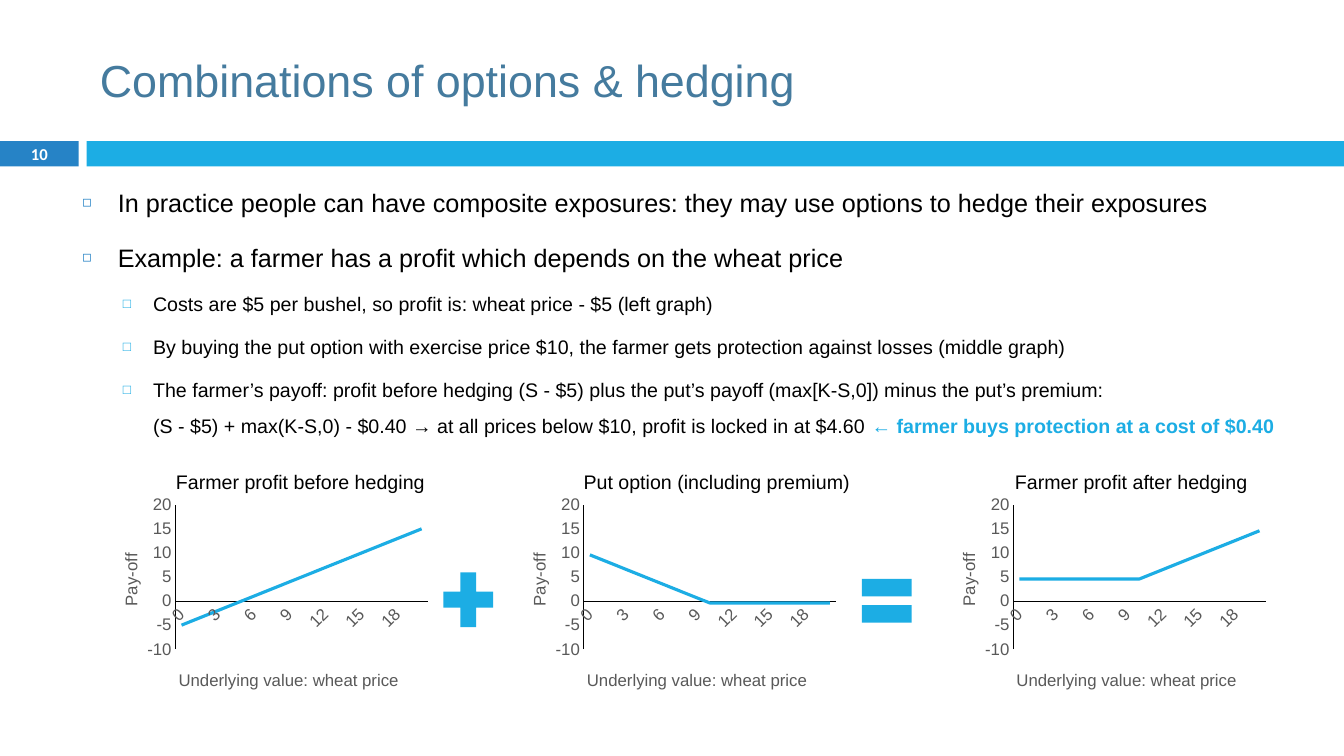
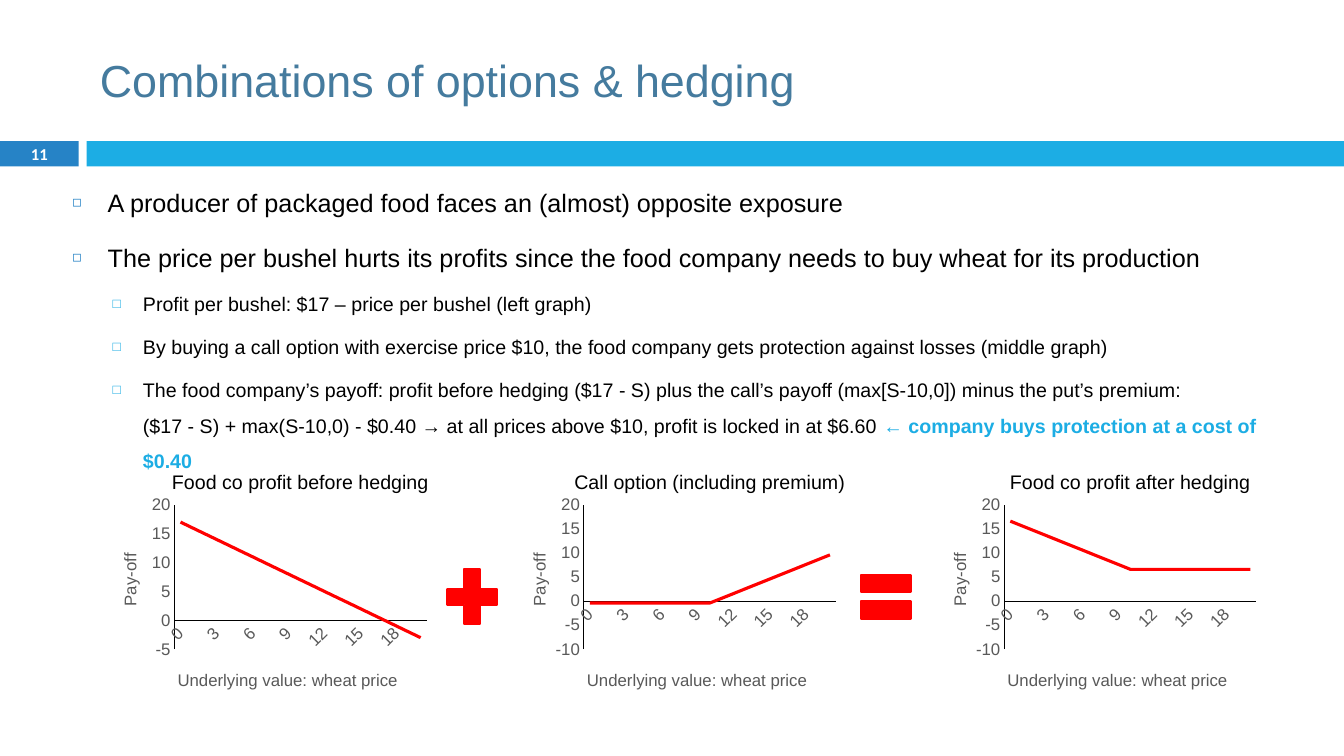
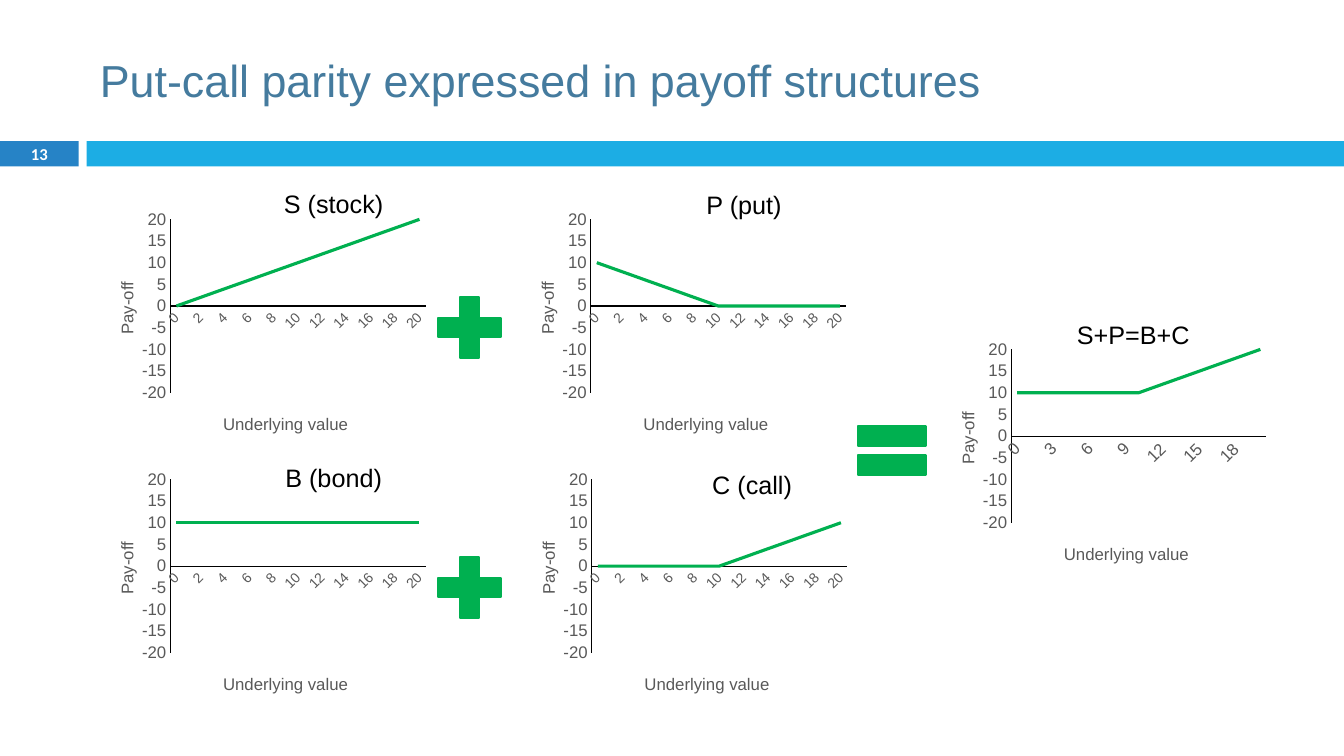
from lxml import etree
from pptx import Presentation
from pptx import util as u
from pptx.chart import data
from pptx.dml.color import RGBColor
from pptx.enum import chart as charts, shapes, text
from pptx.oxml.ns import qn

SKY = RGBColor(0x1C, 0xAD, 0xE4)
BLUE = RGBColor(0x26, 0x83, 0xC6)
TITLE_BLUE = RGBColor(0x45, 0x7B, 0x9E)
RED = RGBColor(0xFF, 0x00, 0x00)
GREEN = RGBColor(0x00, 0xB0, 0x50)
GREY = RGBColor(0x59, 0x59, 0x59)
BLACK = RGBColor(0x00, 0x00, 0x00)
WHITE = RGBColor(0xFF, 0xFF, 0xFF)

STRIKE = 10
PREMIUM = 0.4
COST = 5
REVENUE = 17
PRICES = range(21)

BULLETS = [
    dict(mark="◻", color=BLUE, scale=60, left=0.35, hang=0.35, before=7, size=18),
    dict(mark="□", color=SKY, scale=70, left=0.7, hang=0.3, before=5.5, size=14),
]
HEDGE_FRAME = dict(
    size=(3.38, 2.14), plot=(0.24, 0.06, 0.74, 0.67),
    value_title=(0.07, 0.27), price_title=(0.24, 0.81),
    caption="Underlying value: wheat price",
)
PARITY_FRAME = dict(
    size=(3.4, 2.44), plot=(0.235, 0.06, 0.745, 0.705),
    value_title=(0.07, 0.3), price_title=(0.38, 0.84),
    caption="Underlying value",
)


def put(price):
    return max(STRIKE - price, 0)


def call(price):
    return max(price - STRIKE, 0)


def inches(*lengths):
    return [u.Inches(length) for length in lengths]


def style(font, size, color, bold=False, name="Arial"):
    font.name = name
    font.size = u.Pt(size)
    font.bold = bold
    font.color.rgb = color


def add_block(page, kind, place, color, outline=0):
    block = page.shapes.add_shape(kind, *inches(*place))
    block.shadow.inherit = False
    block.fill.solid()
    block.fill.fore_color.rgb = color
    if outline:
        block.line.color.rgb = color
        block.line.width = u.Pt(outline)
    else:
        block.line.fill.background()
    return block


def add_page(deck, heading, number):
    page = deck.slides.add_slide(deck.slide_layouts[5])
    badge = add_block(page, shapes.MSO_SHAPE.RECTANGLE, (0, 1.4, 0.78, 0.25), BLUE)
    add_block(page, shapes.MSO_SHAPE.RECTANGLE, (0.86, 1.4, 12.47, 0.25), SKY)
    frame = badge.text_frame
    frame.margin_top = frame.margin_bottom = 0
    frame.vertical_anchor = text.MSO_ANCHOR.MIDDLE
    frame.text = str(number)
    frame.paragraphs[0].alignment = text.PP_ALIGN.CENTER
    style(frame.paragraphs[0].runs[0].font, 11.9, WHITE, True, "Calibri")

    title = page.shapes.title
    title.left, title.top, title.width, title.height = inches(0.89, 0.25, 11.89, 1.08)
    title.text_frame.text = heading
    title.text_frame.vertical_anchor = text.MSO_ANCHOR.MIDDLE
    title.text_frame.paragraphs[0].alignment = text.PP_ALIGN.LEFT
    style(title.text_frame.paragraphs[0].runs[0].font, 32, TITLE_BLUE)
    return page


def set_bullet(para, level):
    props = para._p.get_or_add_pPr()
    props.set("marL", str(u.Inches(level["left"])))
    props.set("indent", str(-u.Inches(level["hang"])))
    color = etree.SubElement(props, qn("a:buClr"))
    etree.SubElement(color, qn("a:srgbClr"), val=str(level["color"]))
    etree.SubElement(props, qn("a:buSzPct"), val=str(level["scale"] * 1000))
    etree.SubElement(props, qn("a:buFont"), typeface="Arial")
    etree.SubElement(props, qn("a:buChar"), char=level["mark"])


def add_bullets(page, place, items, highlight):
    frame = page.shapes.add_textbox(*inches(*place)).text_frame
    frame.word_wrap = True
    for index, (depth, words) in enumerate(items):
        level = BULLETS[depth]
        para = frame.add_paragraph() if index else frame.paragraphs[0]
        para.text = words
        para.level = depth
        para.line_spacing = 1.5
        para.space_before = u.Pt(level["before"])
        set_bullet(para, level)
        for span in para.runs:
            style(span.font, level["size"], BLACK)
        for line_break in para._p.findall(qn("a:br")):
            etree.SubElement(line_break, qn("a:rPr"), sz=str(level["size"] * 100))
    span = para.add_run()
    span.text = highlight
    style(span.font, level["size"], SKY, True)


def add_label(page, center, top, words, size):
    width = 3
    box = page.shapes.add_textbox(*inches(center - width / 2, top, width, 0.35))
    box.text_frame.word_wrap = True
    box.text_frame.text = words
    para = box.text_frame.paragraphs[0]
    para.alignment = text.PP_ALIGN.CENTER
    style(para.runs[0].font, size, BLACK)


def set_layout(parent, fractions, inner=False):
    layout = parent.find(qn("c:layout"))
    if layout is None:
        layout = etree.Element(qn("c:layout"))
        parent.insert(0, layout)
    manual = etree.SubElement(layout, qn("c:manualLayout"))
    if inner:
        etree.SubElement(manual, qn("c:layoutTarget"), val="inner")
    for mode in ("xMode", "yMode"):
        etree.SubElement(manual, qn("c:" + mode), val="edge")
    for side, fraction in zip("xywh", fractions):
        etree.SubElement(manual, qn("c:" + side), val=str(fraction))


def format_axis(axis, caption, spot, label_size, title_turn, label_turn):
    axis.has_major_gridlines = False
    axis.major_tick_mark = charts.XL_TICK_MARK.NONE
    axis.minor_tick_mark = charts.XL_TICK_MARK.NONE
    axis.format.line.color.rgb = BLACK
    axis.format.line.width = u.Pt(0.75)
    style(axis.tick_labels.font, label_size, GREY)
    labels = axis._element.find(qn("c:txPr")).find(qn("a:bodyPr"))
    labels.set("rot", str(label_turn * 60000))

    frame = axis.axis_title.text_frame
    frame.text = caption
    style(frame.paragraphs[0].runs[0].font, 12, GREY)
    frame._txBody.find(qn("a:bodyPr")).set("rot", str(title_turn * 60000))
    set_layout(axis.axis_title._element, spot)


def add_payoff(page, left, top, payoff, color, frame, low, label_size=12):
    series_data = data.CategoryChartData()
    series_data.categories = [str(price) for price in PRICES]
    series_data.add_series("Series 1", [round(payoff(price), 1) for price in PRICES])
    chart = page.shapes.add_chart(
        charts.XL_CHART_TYPE.LINE, *inches(left, top, *frame["size"]), series_data
    ).chart
    chart.has_legend = False
    chart.has_title = False
    style(chart.font, 12, BLACK)
    set_layout(chart._chartSpace.chart.plotArea, frame["plot"], True)
    format_axis(chart.category_axis, frame["caption"], frame["price_title"],
                label_size, 0, -45)
    format_axis(chart.value_axis, "Pay-off", frame["value_title"], 12, -90, 0)
    chart.value_axis.minimum_scale = low
    chart.value_axis.maximum_scale = 20
    chart.value_axis.major_unit = 5

    plot = chart.plots[0]
    plot.vary_by_categories = False
    series = plot.series[0]
    series.smooth = False
    series.marker.style = charts.XL_MARKER_STYLE.NONE
    series.format.line.color.rgb = color
    series.format.line.width = u.Pt(2.25)


def add_hedge(page, color, graphs, signs, outline=0):
    for left, center, low, label, payoff in graphs:
        add_payoff(page, left, 4.88, payoff, color, HEDGE_FRAME, low)
        add_label(page, center, 4.61, label, 14)
    kinds = (shapes.MSO_SHAPE.MATH_PLUS, shapes.MSO_SHAPE.MATH_EQUAL)
    for kind, (left, top) in zip(kinds, signs):
        add_block(page, kind, (left, top, 0.67, 0.74), color, outline)


def farmer_slide(deck):
    page = add_page(deck, "Combinations of options & hedging", 10)
    add_bullets(page, (0.72, 1.66, 12.23, 2.95), [
        (0, "In practice people can have composite exposures: they may use options to hedge their exposures"),
        (0, "Example: a farmer has a profit which depends on the wheat price"),
        (1, "Costs are $5 per bushel, so profit is: wheat price - $5 (left graph)"),
        (1, "By buying the put option with exercise price $10, the farmer gets protection against losses (middle graph)"),
        (1, "The farmer’s payoff: profit before hedging (S - $5) plus the put’s payoff (max[K-S,0]) minus the put’s premium:\n"
            "(S - $5) + max(K-S,0) - $0.40 → at all prices below $10, profit is locked in at $4.60 "),
    ], "← farmer buys protection at a cost of $0.40")
    add_hedge(page, SKY, [
        (0.93, 2.98, -10, "Farmer profit before hedging", lambda s: s - COST),
        (4.98, 7.11, -10, "Put option (including premium)", lambda s: put(s) - PREMIUM),
        (9.24, 11.22, -10, "Farmer profit after hedging", lambda s: s - COST + put(s) - PREMIUM),
    ], [(4.31, 5.58), (8.46, 5.59)])


def food_slide(deck):
    page = add_page(deck, "Combinations of options & hedging", 11)
    add_bullets(page, (0.62, 1.66, 12.44, 2.95), [
        (0, "A producer of packaged food faces an (almost) opposite exposure"),
        (0, "The price per bushel hurts its profits since the food company needs to buy wheat for its production"),
        (1, "Profit per bushel: $17 – price per bushel (left graph)"),
        (1, "By buying a call option with exercise price $10, the food company gets protection against losses (middle graph)"),
        (1, "The food company’s payoff: profit before hedging ($17 - S) plus the call’s payoff (max[S-10,0]) minus the put’s premium:\n"
            "($17 - S) + max(S-10,0) - $0.40 → at all prices above $10, profit is locked in at $6.60"),
    ], " ← company buys protection at a cost of $0.40")
    add_hedge(page, RED, [
        (0.92, 2.98, -5, "Food co profit before hedging", lambda s: REVENUE - s),
        (4.98, 7.04, -10, "Call option (including premium)", lambda s: call(s) - PREMIUM),
        (9.15, 11.21, -10, "Food co profit after hedging", lambda s: REVENUE - s + call(s) - PREMIUM),
    ], [(4.35, 5.55), (8.45, 5.55)], 1.5)


def parity_slide(deck):
    page = add_page(deck, "Put-call parity expressed in payoff structures", 13)
    graphs = [
        (0.89, 2.03, 10, 3.31, 1.82, "S (stock)", lambda s: s),
        (5.06, 2.03, 10, 7.38, 1.83, "P (put)", put),
        (0.89, 4.61, 10, 3.31, 4.54, "B (bond)", lambda s: STRIKE),
        (5.07, 4.61, 10, 7.46, 4.61, "C (call)", call),
        (9.23, 3.32, 12, 11.24, 3.12, "S+P=B+C", lambda s: s + put(s)),
    ]
    for left, top, label_size, center, label_top, label, payoff in graphs:
        add_payoff(page, left, top, payoff, GREEN, PARITY_FRAME, -20, label_size)
        add_label(page, center, label_top, label, 18)
    for top in (2.84, 5.42):
        add_block(page, shapes.MSO_SHAPE.MATH_PLUS, (4.23, top, 0.85, 0.82), GREEN, 1.5)
    add_block(page, shapes.MSO_SHAPE.MATH_EQUAL, (8.39, 4.06, 0.91, 0.82), GREEN, 1.5)


def main():
    deck = Presentation()
    deck.slide_width, deck.slide_height = inches(13.33, 7.5)
    farmer_slide(deck)
    food_slide(deck)
    parity_slide(deck)
    deck.save("out.pptx")


if __name__ == "__main__":
    main()
